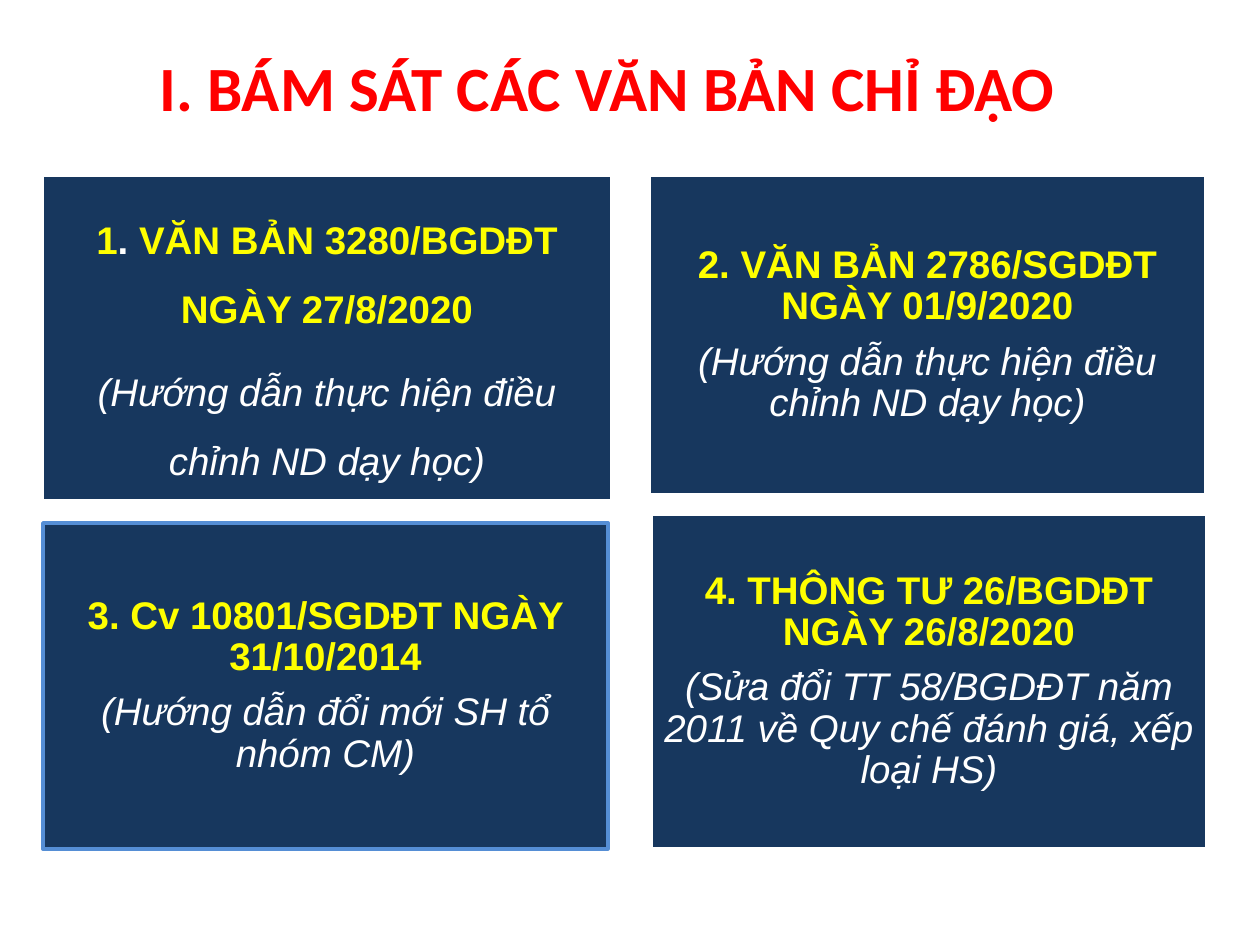
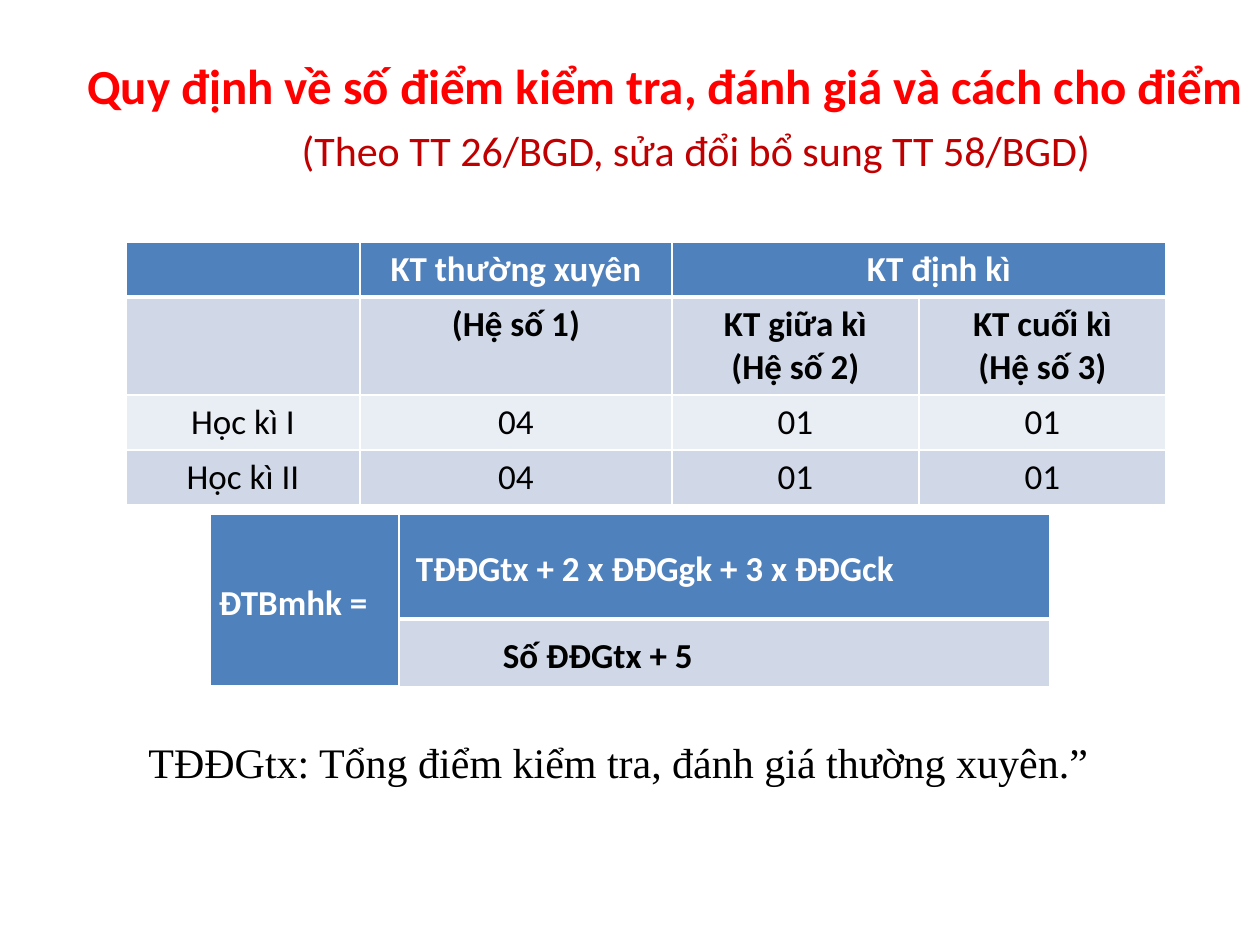
"""Build two slides on guiding documents and on scoring rules."""
from dataclasses import dataclass, field
from typing import Any

from lxml.etree import SubElement
from pptx import Presentation
from pptx.dml.color import RGBColor
from pptx.enum.shapes import MSO_SHAPE
from pptx.enum.text import MSO_ANCHOR, PP_ALIGN
from pptx.oxml.ns import qn
from pptx.util import Emu, Pt

PX_PER_INCH = 126
COLORS = {
    "white": "FFFFFF", "black": "000000", "red": "FF0000", "dark_red": "C00000",
    "yellow": "FFFF00", "navy": "17375E", "sky": "558ED5",
    "header": "4F81BD", "band": "D0D8E8", "pale": "E9EDF4",
}
CENTERED = {"alignment": PP_ALIGN.CENTER}
FORMULA = {"line_spacing": 1.15}
MARGIN_SIDES = ("margin_left", "margin_top", "margin_right", "margin_bottom")


@dataclass
class Span:
    """A stretch of text in one font."""
    text: str
    color: str
    size: int
    font: str = "Calibri"
    bold: bool = False
    italic: bool = False


@dataclass
class Line:
    """A paragraph with its format values and left indent in px."""
    spans: list[Span]
    layout: dict[str, Any] = field(default_factory=dict)
    indent: int = 0


@dataclass
class Card:
    """A filled panel naming one document."""
    box: tuple[int, int, int, int]
    heading: list[tuple[str, str]]
    summary: str
    outline: str = "white"
    spacing: float = 0.9


@dataclass
class Grid:
    """A table with its sizes in px, fills by row and merged ranges."""
    origin: tuple[int, int]
    widths: list[int]
    heights: list[int]
    fills: list[str]
    rows: list[list[list[Line]]]
    merge: tuple[int, int, int, int]
    cell_format: dict[str, Any] = field(default_factory=dict)


def px(length: int) -> Emu:
    """Turn px into EMU."""
    return Emu(round(length * 914400 / PX_PER_INCH))


def rgb(name: str) -> RGBColor:
    """Look up a named colour."""
    return RGBColor.from_string(COLORS[name])


def apply_format(target: Any, values: dict[str, Any]) -> None:
    """Set each format value on the target."""
    for attribute, value in values.items():
        setattr(target, attribute, value)


def write_lines(frame: Any, lines: list[Line]) -> None:
    """Fill a text frame with formatted paragraphs."""
    for index, line in enumerate(lines):
        paragraph = frame.add_paragraph() if index else frame.paragraphs[0]
        apply_format(paragraph, line.layout)
        if line.indent:
            paragraph._p.get_or_add_pPr().set("marL", str(px(line.indent)))
        for span in line.spans:
            run = paragraph.add_run()
            run.text = span.text
            apply_format(run.font, {"name": span.font, "size": Pt(span.size),
                                    "bold": span.bold, "italic": span.italic})
            run.font.color.rgb = rgb(span.color)


def add_text(slide: Any, box: tuple[int, int, int, int], lines: list[Line],
             anchor: MSO_ANCHOR = MSO_ANCHOR.TOP) -> None:
    """Add a wrapping text box."""
    frame = slide.shapes.add_textbox(*map(px, box)).text_frame
    apply_format(frame, {"word_wrap": True, "vertical_anchor": anchor})
    write_lines(frame, lines)


def title_span(text: str, size: int) -> Span:
    """Give the shared title style."""
    return Span(text, "red", size, bold=True)


def add_card(slide: Any, card: Card) -> None:
    """Draw one document panel."""
    panel = slide.shapes.add_shape(MSO_SHAPE.RECTANGLE, *map(px, card.box))
    panel.shadow.inherit = False
    panel.fill.solid()
    panel.fill.fore_color.rgb = rgb("navy")
    panel.line.color.rgb = rgb(card.outline)
    panel.line.width = Pt(2)
    apply_format(panel.text_frame, {"word_wrap": True, "vertical_anchor": MSO_ANCHOR.MIDDLE}
                 | dict.fromkeys(MARGIN_SIDES, px(11)))
    layout = CENTERED | {"line_spacing": card.spacing, "space_after": Pt(7.7)}
    heading = [Span(text, color, 22, "Arial", bold=True) for text, color in card.heading]
    summary = [Span(card.summary, "white", 22, "Arial", italic=True)]
    write_lines(panel.text_frame, [Line(heading, layout), Line(summary, layout)])


def add_borders(cell: Any, row: int) -> None:
    """Draw white cell borders, thicker under the header row."""
    widths = {"lnL": 1, "lnR": 1, "lnT": 3 if row == 1 else 1, "lnB": 3 if row == 0 else 1}
    for side, width in widths.items():
        border = SubElement(cell._tc.get_or_add_tcPr(), qn(f"a:{side}"), w=str(Pt(width)))
        paint = SubElement(border, qn("a:solidFill"))
        SubElement(paint, qn("a:srgbClr"), val=COLORS["white"])


def add_grid(slide: Any, grid: Grid) -> None:
    """Draw a table."""
    size = (sum(grid.widths), sum(grid.heights))
    table = slide.shapes.add_table(len(grid.heights), len(grid.widths),
                                   *map(px, grid.origin + size)).table
    apply_format(table, {"first_row": False, "horz_banding": False})
    for column, width in zip(table.columns, grid.widths):
        column.width = px(width)
    for row, height in zip(table.rows, grid.heights):
        row.height = px(height)
    for r, (fill, row_lines) in enumerate(zip(grid.fills, grid.rows)):
        for c, lines in enumerate(row_lines):
            cell = table.cell(r, c)
            add_borders(cell, r)
            cell.fill.solid()
            cell.fill.fore_color.rgb = rgb(fill)
            apply_format(cell, grid.cell_format)
            write_lines(cell.text_frame, lines)
    top, left, bottom, right = grid.merge
    table.cell(top, left).merge(table.cell(bottom, right))


def cell_lines(*texts: str, color: str = "black", bold: bool = False,
               layout: dict[str, Any] = CENTERED, indent: int = 0) -> list[Line]:
    """Give the paragraphs of one table cell."""
    return [Line([Span(text, color, 20, bold=bold)], layout, indent) for text in texts]


CARDS = [
    Card((42, 175, 570, 326),
         [("1", "yellow"), (". ", "white"), ("VĂN BẢN 3280/BGDĐT NGÀY 27/8/2020", "yellow")],
         "(Hướng dẫn thực hiện điều chỉnh ND dạy học)", spacing=1.5),
    Card((649, 175, 557, 320), [("2. VĂN BẢN 2786/SGDĐT NGÀY 01/9/2020", "yellow")],
         "(Hướng dẫn thực hiện điều chỉnh ND dạy học)"),
    Card((43, 523, 565, 326), [("3. Cv 10801/SGDĐT NGÀY 31/10/2014", "yellow")],
         "(Hướng dẫn đổi mới SH tổ nhóm CM)", outline="sky"),
    Card((651, 514, 556, 335), [("4. THÔNG TƯ 26/BGDĐT NGÀY 26/8/2020", "yellow")],
         "(Sửa đổi TT 58/BGDĐT năm 2011 về Quy chế đánh giá, xếp loại HS)"),
]

SCORE_COUNTS = Grid(
    (126, 242), [234, 312, 247, 247], [55, 98, 55, 55], ["header", "band", "pale", "band"],
    [
        [[], cell_lines("KT thường xuyên", color="white", bold=True),
         cell_lines("KT định kì", color="white", bold=True, indent=40), []],
        [[], cell_lines("(Hệ số 1)", bold=True),
         cell_lines("KT giữa kì", "(Hệ số 2)", bold=True),
         cell_lines("KT cuối kì", "(Hệ số 3)", bold=True)],
        *[[cell_lines(text) for text in (term, "04", "01", "01")]
          for term in ("Học kì I", "Học kì II")],
    ],
    merge=(0, 2, 0, 3))

AVERAGE_FORMULA = Grid(
    (210, 514), [189, 651], [105, 68], ["header", "band"],
    [
        [cell_lines("ĐTBmhk =", color="white", bold=True, layout=FORMULA),
         cell_lines("TĐĐGtx + 2 x ĐĐGgk + 3 x ĐĐGck", color="white", bold=True,
                    layout=FORMULA | {"space_before": Pt(6)}, indent=8)],
        [[], cell_lines("Số ĐĐGtx + 5", bold=True,
                        layout=FORMULA | {"space_before": Pt(6)}, indent=95)],
    ],
    merge=(0, 0, 1, 0),
    cell_format={"vertical_anchor": MSO_ANCHOR.MIDDLE} | dict(zip(MARGIN_SIDES, map(px, (9, 0, 9, 0)))))


def build_documents(slide: Any) -> None:
    """Build the slide of guiding documents."""
    for card in CARDS:
        add_card(slide, card)
    add_text(slide, (147, 42, 966, 89), [Line([title_span("I. BÁM SÁT CÁC VĂN BẢN CHỈ ĐẠO", 36)])])


def build_scoring(slide: Any) -> None:
    """Build the slide of scoring rules."""
    basis = Span("(Theo TT 26/BGD, sửa đổi bổ sung TT 58/BGD)", "dark_red", 24)
    add_text(slide, (0, 49, 1260, 140), [
        Line([title_span("Quy định về số điểm kiểm tra, đánh giá và cách cho điểm", 28)], indent=75),
        Line([basis], CENTERED | {"space_before": Pt(6)}, indent=132)])
    add_grid(slide, SCORE_COUNTS)
    add_grid(slide, AVERAGE_FORMULA)
    note = Span("TĐĐGtx: Tổng điểm kiểm tra, đánh giá thường xuyên.”", "black", 24, "Times New Roman")
    add_text(slide, (136, 730, 1100, 63), [Line([note])], MSO_ANCHOR.MIDDLE)


def main() -> None:
    """Build and save the presentation."""
    deck = Presentation()
    apply_format(deck, {"slide_width": px(1260), "slide_height": px(945)})
    for build in (build_documents, build_scoring):
        build(deck.slides.add_slide(deck.slide_layouts[6]))
    deck.save("out.pptx")


if __name__ == "__main__":
    main()
